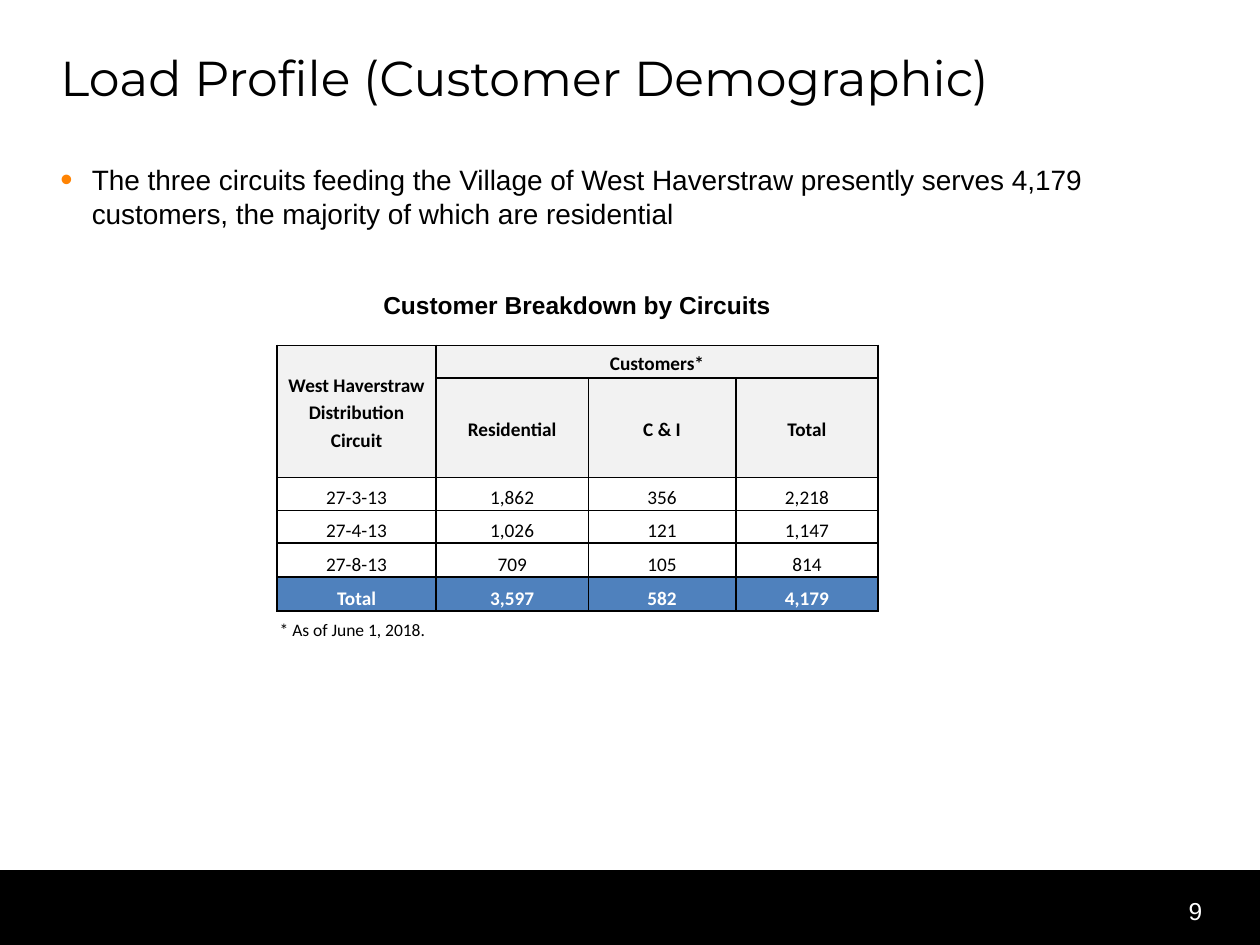
from lxml.etree import SubElement
from pptx import Presentation
from pptx.dml.color import RGBColor
from pptx.enum.shapes import MSO_SHAPE
from pptx.enum.text import MSO_ANCHOR, PP_ALIGN
from pptx.oxml.ns import qn
from pptx.util import Inches, Pt

COLORS = {
    "black": "000000",
    "white": "FFFFFF",
    "bullet": "FF8302",
    "header": "F2F2F2",
    "total": "4F81BD",
}
COLUMN_WIDTHS = [1.26, 1.21, 1.17, 1.13]
ROW_HEIGHTS = [0.26, 0.79, 0.26, 0.26, 0.27, 0.27]
CIRCUIT_ROWS = [
    ["West Haverstraw Distribution Circuit", "Customers*", "", ""],
    ["", "Residential", "C & I", "Total"],
    ["27-3-13", "1,862", "356", "2,218"],
    ["27-4-13", "1,026", "121", "1,147"],
    ["27-8-13", "709", "105", "814"],
    ["Total", "3,597", "582", "4,179"],
]


def color(name):
    return RGBColor.from_string(COLORS[name])


def set_font(paragraph, name, size, color_name="black", bold=False):
    font = paragraph.font
    font.name = name
    font.size = Pt(size)
    font.bold = bold
    font.color.rgb = color(color_name)


def add_text(slide, box, text, align=PP_ALIGN.LEFT, wrap=True):
    shape = slide.shapes.add_textbox(*map(Inches, box))
    shape.text_frame.word_wrap = wrap
    paragraph = shape.text_frame.paragraphs[0]
    paragraph.text = text
    paragraph.alignment = align
    return shape, paragraph


def add_title(slide, box, text):
    title = slide.shapes.title
    title.left, title.top, title.width, title.height = map(Inches, box)
    title.text_frame.vertical_anchor = MSO_ANCHOR.TOP
    paragraph = title.text_frame.paragraphs[0]
    paragraph.text = text
    paragraph.alignment = PP_ALIGN.LEFT
    paragraph.line_spacing = 0.9
    set_font(paragraph, "Montserrat", 28)


def add_bullet_text(slide, box, text):
    shape, paragraph = add_text(slide, box, text)
    properties = paragraph._p.get_or_add_pPr()
    properties.set("marL", str(Inches(0.25)))
    properties.set("indent", str(-Inches(0.25)))
    bullet_color = SubElement(properties, qn("a:buClr"))
    SubElement(bullet_color, qn("a:srgbClr"), val=COLORS["bullet"])
    SubElement(properties, qn("a:buSzPct"), val="125000")
    SubElement(properties, qn("a:buFont"), typeface="Arial")
    SubElement(properties, qn("a:buChar"), char="•")
    set_font(paragraph, "Arial", 16)


def add_borders(cell):
    properties = cell._tc.get_or_add_tcPr()
    for index, side in enumerate(("lnL", "lnR", "lnT", "lnB")):
        line = properties.makeelement(qn(f"a:{side}"), {"w": str(Pt(1))})
        fill = SubElement(line, qn("a:solidFill"))
        SubElement(fill, qn("a:srgbClr"), val=COLORS["black"])
        properties.insert(index, line)


def format_cell(cell, text, is_header, is_total):
    cell.margin_left = cell.margin_right = Inches(0.07)
    cell.margin_top = cell.margin_bottom = 0
    cell.vertical_anchor = MSO_ANCHOR.MIDDLE if is_header else MSO_ANCHOR.BOTTOM
    if is_header or is_total:
        cell.fill.solid()
        cell.fill.fore_color.rgb = color("header" if is_header else "total")
    else:
        cell.fill.background()
    add_borders(cell)
    paragraph = cell.text_frame.paragraphs[0]
    paragraph.text = text
    paragraph.alignment = PP_ALIGN.CENTER
    paragraph.line_spacing = 1.15
    set_font(paragraph, "Calibri", 11, "white" if is_total else "black", is_header or is_total)


def add_customer_table(slide, left, top):
    width, height = sum(COLUMN_WIDTHS), sum(ROW_HEIGHTS)
    caption, paragraph = add_text(
        slide, (left + width / 2 - 1.65, top - 0.49, 3.29, 0.34),
        "Customer Breakdown by Circuits", PP_ALIGN.CENTER, wrap=False)
    caption.text_frame.vertical_anchor = MSO_ANCHOR.MIDDLE
    set_font(paragraph, "Arial", 14, bold=True)

    table = slide.shapes.add_table(
        len(ROW_HEIGHTS), len(COLUMN_WIDTHS), *map(Inches, (left, top, width, height))).table
    for column, column_width in zip(table.columns, COLUMN_WIDTHS):
        column.width = Inches(column_width)
    for row, row_height in zip(table.rows, ROW_HEIGHTS):
        row.height = Inches(row_height)
    for row_index, values in enumerate(CIRCUIT_ROWS):
        for column_index, text in enumerate(values):
            format_cell(table.cell(row_index, column_index), text,
                        row_index < 2, row_index == len(CIRCUIT_ROWS) - 1)
    table.cell(0, 0).merge(table.cell(1, 0))
    table.cell(0, 1).merge(table.cell(0, 3))

    footnote, paragraph = add_text(
        slide, (left - 0.11, top + height + 0.01, 1.4, 0.27), "* As of June 1, 2018.", wrap=False)
    footnote.text_frame.margin_left = Inches(0.13)
    set_font(paragraph, "Calibri", 10)


def add_footer(slide, left, top, width, height):
    bar = slide.shapes.add_shape(MSO_SHAPE.RECTANGLE, *map(Inches, (left, top, width, height)))
    bar.shadow.inherit = False
    bar.fill.solid()
    bar.fill.fore_color.rgb = color("black")
    bar.line.color.rgb = color("black")
    bar.line.width = Pt(0.75)
    number, paragraph = add_text(
        slide, (left + width - 0.98, top + 0.15, 0.62, 0.4), "9", PP_ALIGN.RIGHT)
    set_font(paragraph, "Arial", 14, "white")


def main():
    presentation = Presentation()
    presentation.slide_width = Inches(10)
    presentation.slide_height = Inches(7.5)
    slide = presentation.slides.add_slide(presentation.slide_layouts[5])
    add_footer(slide, 0, 6.91, 10, 0.59)
    add_title(slide, (0.38, 0.38, 9.25, 1.18), "Load Profile (Customer Demographic)")
    add_bullet_text(
        slide, (0.38, 1.24, 9.25, 5.25),
        "The three circuits feeding the Village of West Haverstraw presently serves 4,179 "
        "customers, the majority of which are residential")
    add_customer_table(slide, 2.2, 2.74)
    presentation.save("out.pptx")


if __name__ == "__main__":
    main()
